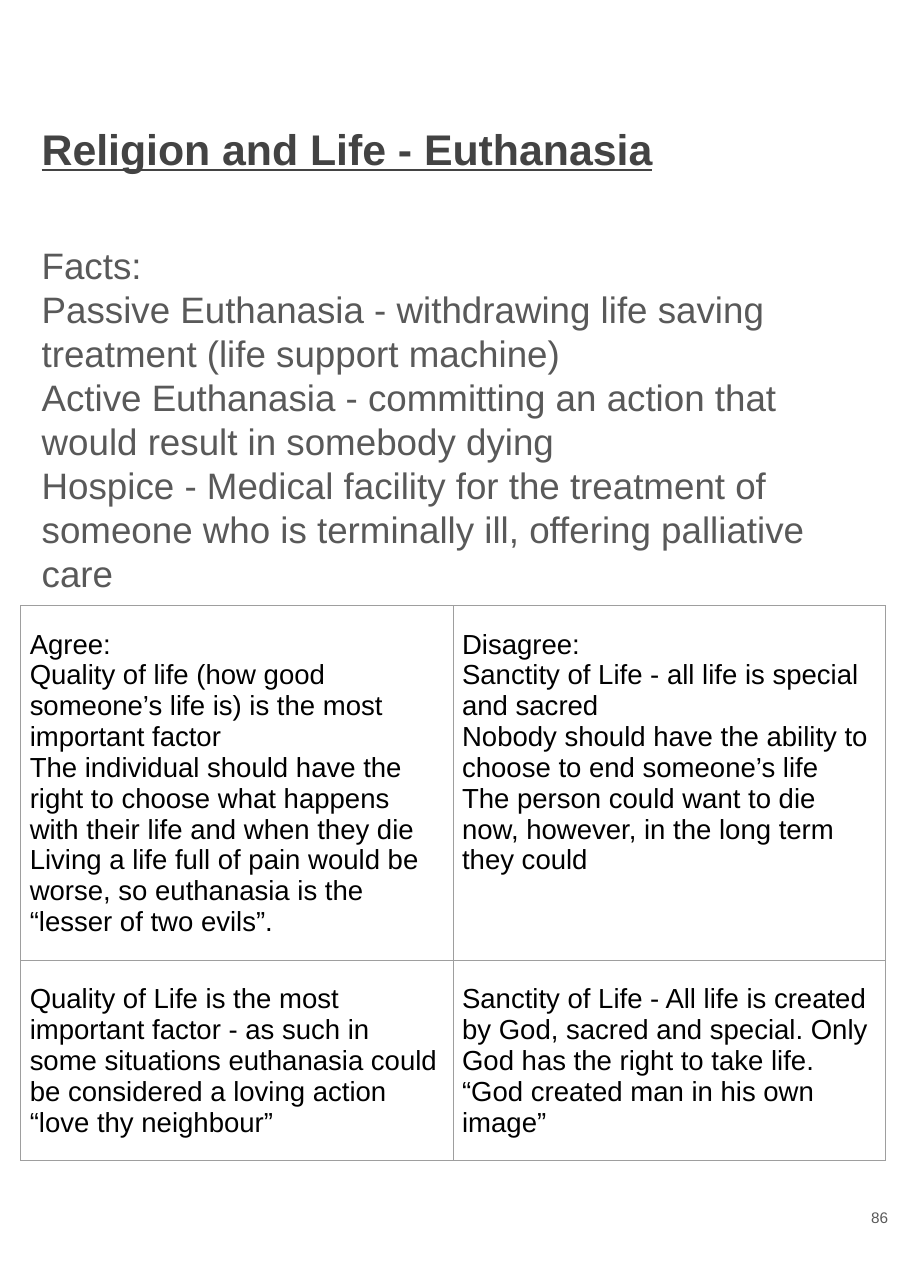
from pptx import Presentation
from pptx.util import Inches, Pt
from pptx.dml.color import RGBColor
from pptx.enum.text import MSO_ANCHOR, PP_ALIGN
from lxml import etree

NS = "http://schemas.openxmlformats.org/drawingml/2006/main"


def fill_text(frame, lines, size, color):
    frame.word_wrap = True
    frame.text = "\n".join(lines)
    for para in frame.paragraphs:
        para.line_spacing = 1.0
        for run in para.runs:
            run.font.name = "Arial"
            run.font.size = Pt(size)
            run.font.color.rgb = RGBColor.from_string(color)


def add_text(slide, box, lines, size, color):
    frame = slide.shapes.add_textbox(*[Inches(n) for n in box]).text_frame
    frame.margin_left = frame.margin_right = Inches(0.1)
    frame.margin_top = frame.margin_bottom = Inches(0.1)
    fill_text(frame, lines, size, color)
    return frame


deck = Presentation()
deck.slide_width = Inches(8.27)
deck.slide_height = Inches(11.69)
slide = deck.slides.add_slide(deck.slide_layouts[6])

title = add_text(slide, (0.28, 1.01, 7.7, 1.3),
                 ["Religion and Life - Euthanasia"], 28, "434343")
font = title.paragraphs[0].runs[0].font
font.bold = True
font.underline = True

facts = [
    "Facts:",
    "Passive Euthanasia - withdrawing life saving treatment (life support machine)",
    "Active Euthanasia - committing an action that would result in somebody dying",
    "Hospice - Medical facility for the treatment of someone who is terminally ill, offering palliative care",
]
add_text(slide, (0.28, 2.1, 7.7, 3.86), facts, 24, "595959")

views = [
    [
        ["Agree:",
         "Quality of life (how good someone’s life is) is the most important factor",
         "The individual should have the right to choose what happens with their life and when they die",
         "Living a life full of pain would be worse, so euthanasia is the “lesser of two evils”."],
        ["Disagree:",
         "Sanctity of Life - all life is special and sacred",
         "Nobody should have the ability to choose to end someone’s life",
         "The person could want to die now, however, in the long term they could"],
    ],
    [
        ["Quality of Life is the most important factor - as such in some situations euthanasia could be considered a loving action “love thy neighbour”"],
        ["Sanctity of Life - All life is created by God, sacred and special. Only God has the right to take life.",
         "“God created man in his own image”"],
    ],
]
highs = (3.22, 1.81)
table = slide.shapes.add_table(2, 2, Inches(0.19), Inches(5.5),
                               Inches(7.85), Inches(sum(highs))).table
table.first_row = False
table.horz_banding = False
for row, high in zip(table.rows, highs):
    row.height = Inches(high)
for r, row in enumerate(views):
    for c, lines in enumerate(row):
        cell = table.cell(r, c)
        cell.margin_left = cell.margin_right = Inches(0.08)
        cell.margin_top = Inches(0.21)
        cell.margin_bottom = 0
        fill_text(cell.text_frame, lines, 18, "000000")
        props = cell._tc.get_or_add_tcPr()
        for side in ("lnL", "lnR", "lnT", "lnB"):
            edge = etree.SubElement(props, f"{{{NS}}}{side}", w=str(Pt(0.75)))
            solid = etree.SubElement(edge, f"{{{NS}}}solidFill")
            etree.SubElement(solid, f"{{{NS}}}srgbClr", val="9E9E9E")
        cell.fill.background()

number = add_text(slide, (7.66, 10.6, 0.5, 0.89), ["86"], 10, "595959")
number.vertical_anchor = MSO_ANCHOR.MIDDLE
number.paragraphs[0].alignment = PP_ALIGN.RIGHT

deck.save("out.pptx")
